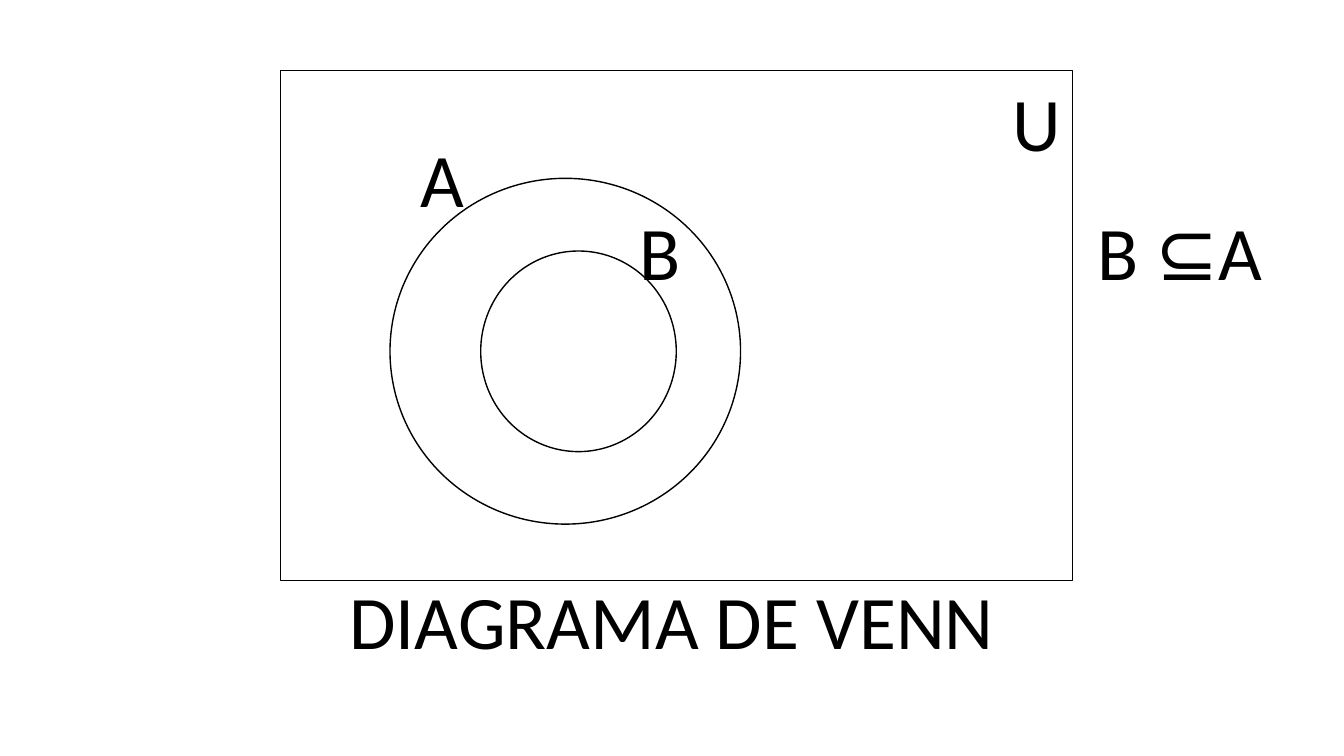
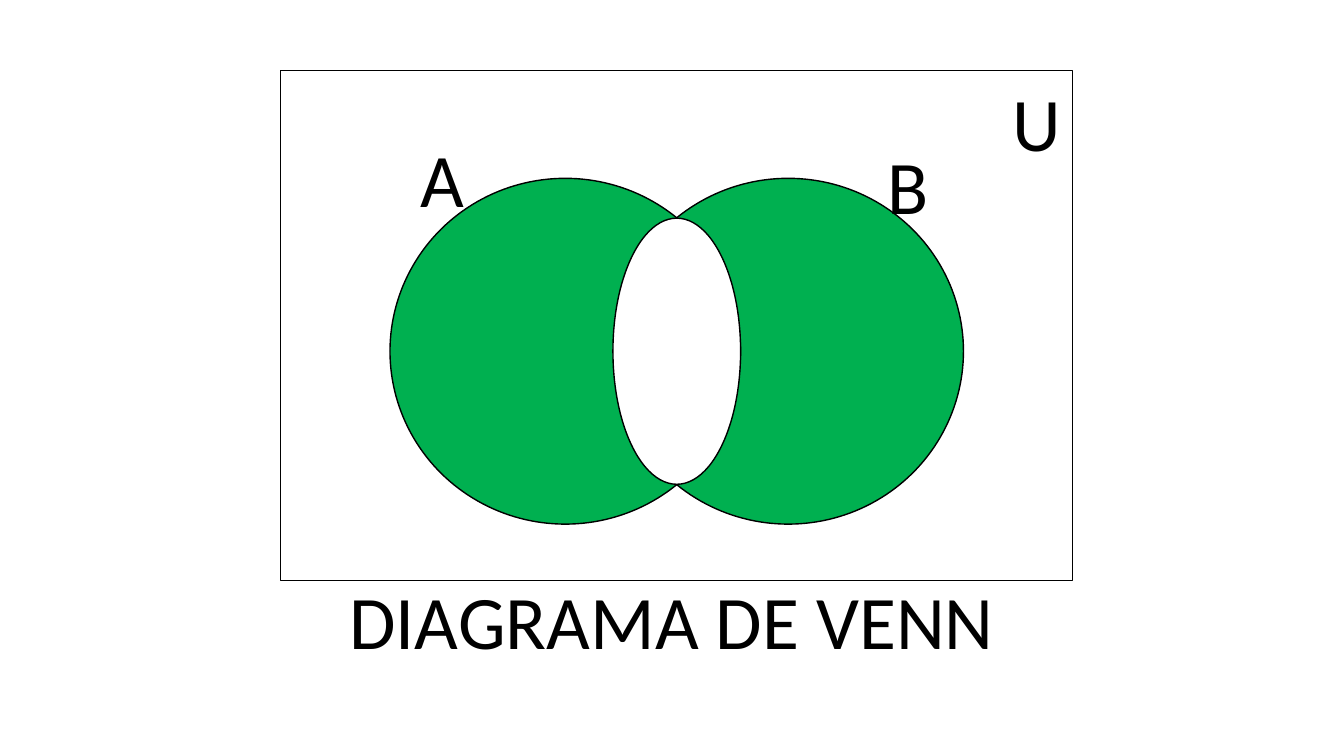
from pptx import Presentation
from pptx.dml.color import RGBColor
from pptx.enum import shapes, text
from pptx.util import Pt

COLORS = {"ink": "000000", "paper": "FFFFFF", "difference": "00B050"}
FONT, TEXT_SIZE, LINE_WIDTH = "Calibri", 54, 1
LABEL_HEIGHT = 72.7

UNIVERSE = (200.2, 50.4, 566, 364.3)
CIRCLE_TOP, CIRCLE_WIDTH, CIRCLE_HEIGHT = 127.4, 250.4, 247
A_LEFT, B_LEFT = 278.6, 437.8
CIRCLE_A = (A_LEFT, CIRCLE_TOP, CIRCLE_WIDTH, CIRCLE_HEIGHT)
CIRCLE_B = (B_LEFT, CIRCLE_TOP, CIRCLE_WIDTH, CIRCLE_HEIGHT)
SUBSET_B = (343.4, 179.3, 139.7, 143.3)
LENS_HEIGHT = 190.1
INTERSECTION = (B_LEFT, CIRCLE_TOP + (CIRCLE_HEIGHT - LENS_HEIGHT) / 2,
                A_LEFT + CIRCLE_WIDTH - B_LEFT, LENS_HEIGHT)

SHARED_LABELS = [
    ("A", 293, 90.7, 46.1),
    ("DIAGRAMA DE VENN", 242.6, 406.1, 479.5),
    ("U", 716.4, 50.4, 49.7),
]
DIAGRAMS = [
    {
        "sets": [(SUBSET_B, None), (CIRCLE_A, None)],
        "labels": [("B", 450, 142.6, 43.9)],
        "statement": ("B ⊆A", 776.9, 142.6, 160.6),
    },
    {
        "sets": [(CIRCLE_B, "difference"), (CIRCLE_A, "difference"),
                 (INTERSECTION, "paper")],
        "labels": [("B", 627.1, 95.8, 43.9)],
    },
]


def add_outline(slide, preset, box, fill=None):
    outline = slide.shapes.add_shape(preset, *map(Pt, box))
    outline.shadow.inherit = False
    outline.line.color.rgb = RGBColor.from_string(COLORS["ink"])
    outline.line.width = Pt(LINE_WIDTH)
    if fill:
        outline.fill.solid()
        outline.fill.fore_color.rgb = RGBColor.from_string(COLORS[fill])
    else:
        outline.fill.background()


def add_label(slide, wording, left, top, width, wrap=False):
    label = slide.shapes.add_textbox(*map(Pt, (left, top, width, LABEL_HEIGHT)))
    frame = label.text_frame
    frame.word_wrap = wrap
    frame.auto_size = text.MSO_AUTO_SIZE.SHAPE_TO_FIT_TEXT
    run = frame.paragraphs[0].add_run()
    run.text = wording
    run.font.name = FONT
    run.font.size = Pt(TEXT_SIZE)
    run.font.color.rgb = RGBColor.from_string(COLORS["ink"])


def add_diagram(deck, diagram):
    slide = deck.slides.add_slide(deck.slide_layouts[6])
    add_outline(slide, shapes.MSO_SHAPE.RECTANGLE, UNIVERSE)
    for box, fill in diagram["sets"]:
        add_outline(slide, shapes.MSO_SHAPE.OVAL, box, fill)
    for label in SHARED_LABELS + diagram["labels"]:
        add_label(slide, *label)
    if "statement" in diagram:
        add_label(slide, *diagram["statement"], wrap=True)


def main():
    deck = Presentation()
    deck.slide_width, deck.slide_height = Pt(960), Pt(540)
    for diagram in DIAGRAMS:
        add_diagram(deck, diagram)
    deck.save("out.pptx")


if __name__ == "__main__":
    main()
